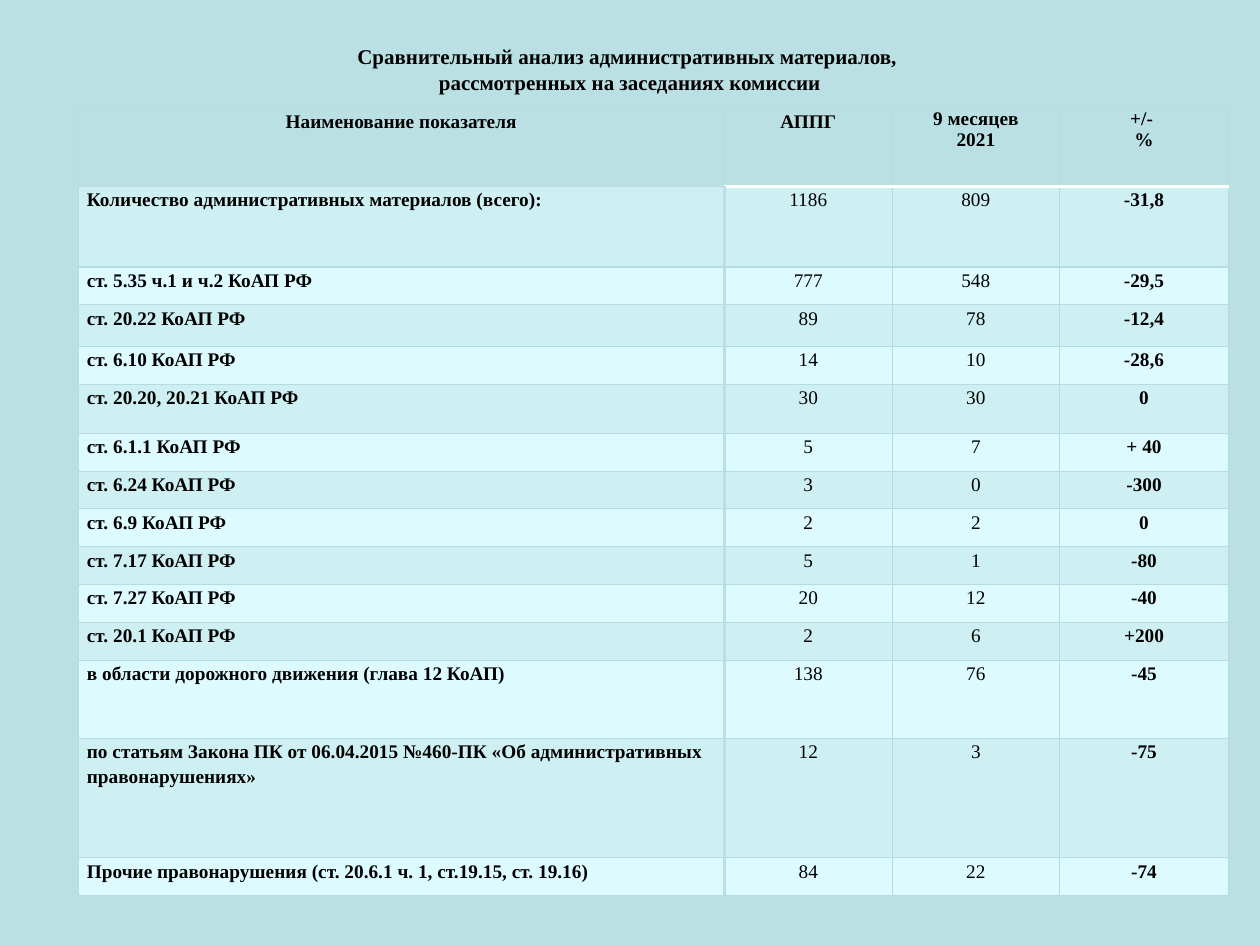
from lxml import etree
from pptx import Presentation
from pptx.dml.color import RGBColor
from pptx.enum.text import MSO_ANCHOR, PP_ALIGN
from pptx.oxml.ns import qn
from pptx.util import Inches, Pt

TOP = MSO_ANCHOR.TOP
LEFT, CENTER, JUSTIFY = PP_ALIGN.LEFT, PP_ALIGN.CENTER, PP_ALIGN.JUSTIFY

BACKGROUND = "BBE0E3"
BANDS = ("DDFBFF", "CFF0F2")
GRID = ("B6DCDF", 0.75)
COLUMN_RULE = (BACKGROUND, 2)
HEADER_RULE = ("FFFFFF", 2)

TITLE = "Сравнительный анализ административных материалов, \nрассмотренных на заседаниях комиссии"
HEADER = (
    ["Наименование показателя"],
    ["АППГ"],
    ["9 месяцев", "2021"],
    ["+/- ", "%"],
)
# Indicator, previous period, current period, change, row height
INDICATORS = (
    ("Количество административных материалов (всего):", "1186", "809", "-31,8", 0.64),
    ("ст. 5.35 ч.1 и ч.2 КоАП РФ", "777", "548", "-29,5", 0.3),
    ("ст. 20.22 КоАП РФ", "89", "78", "-12,4", 0.33),
    ("ст. 6.10 КоАП РФ", "14", "10", "-28,6", 0.3),
    ("ст. 20.20, 20.21 КоАП РФ", "30", "30", "0", 0.39),
    ("ст. 6.1.1 КоАП РФ", "5", "7", "+ 40", 0.3),
    ("ст. 6.24 КоАП РФ", "3", "0", "-300", 0.3),
    ("ст. 6.9 КоАП РФ", "2", "2", "0", 0.3),
    ("ст. 7.17 КоАП РФ", "5", "1", "-80", 0.3),
    ("ст. 7.27 КоАП РФ", "20", "12", "-40", 0.3),
    ("ст. 20.1 КоАП РФ", "2", "6", "+200", 0.3),
    ("в области дорожного движения (глава 12 КоАП)", "138", "76", "-45", 0.62),
    ("по статьям Закона ПК от 06.04.2015 №460-ПК «Об административных правонарушениях»",
     "12", "3", "-75", 0.95),
    ("Прочие правонарушения (ст. 20.6.1 ч. 1, ст.19.15, ст. 19.16)", "84", "22", "-74", 0.3),
)
LEFT_ALIGNED_ROWS = (2, 13)
HEADER_HEIGHT = 0.62
COLUMN_WIDTHS = (5.13, 1.33, 1.33, 1.34)


def color(value):
    return RGBColor.from_string(value)


def apply(target, values):
    for name, value in values.items():
        setattr(target, name, value)


class SlideBuilder:
    font = "Times New Roman"
    ink = "000000"
    cell_format = {"margin_left": Inches(0.07), "margin_right": Inches(0.07),
                   "margin_top": 0, "margin_bottom": 0, "vertical_anchor": TOP}
    spaced = {"line_spacing": 1.15, "space_after": Pt(10)}

    def __init__(self, slide):
        self.slide = slide

    def background(self, value):
        fill = self.slide.background.fill
        fill.solid()
        fill.fore_color.rgb = color(value)

    def add_lines(self, frame, lines, size, bold, paragraph_format):
        for index, line in enumerate(lines):
            paragraph = frame.paragraphs[0] if index == 0 else frame.add_paragraph()
            paragraph.text = line
            apply(paragraph, paragraph_format)
            for run in paragraph.runs:
                apply(run.font, {"name": self.font, "size": Pt(size), "bold": bold})
                run.font.color.rgb = color(self.ink)

    def title(self, text, box):
        frame = self.slide.shapes.add_textbox(*map(Inches, box)).text_frame
        apply(frame, {"word_wrap": True, "vertical_anchor": TOP})
        self.add_lines(frame, [text], 12, True, {"alignment": CENTER})

    def table(self, left, top, widths, heights):
        table = self.slide.shapes.add_table(
            len(heights), len(widths), Inches(left), Inches(top),
            Inches(sum(widths)), Inches(sum(heights))).table
        apply(table, {"first_row": False, "horz_banding": False})
        for column, width in zip(table.columns, widths):
            column.width = Inches(width)
        for row, height in zip(table.rows, heights):
            row.height = Inches(height)
        return table

    def cell(self, cell, lines, bold, align, fill, borders):
        apply(cell, self.cell_format)
        spacing = self.spaced if len(lines) == 1 else {}
        self.add_lines(cell.text_frame, lines, 11, bold, {"alignment": align, **spacing})
        self.borders(cell, borders)
        cell.fill.solid()
        cell.fill.fore_color.rgb = color(fill)

    def borders(self, cell, special):
        properties = cell._tc.get_or_add_tcPr()
        for side in "LRTB":
            value, width = special.get(side, GRID)
            line = etree.SubElement(properties, qn(f"a:ln{side}"), w=str(Pt(width)))
            solid = etree.SubElement(line, qn("a:solidFill"))
            etree.SubElement(solid, qn("a:srgbClr"), val=value)


def main():
    prs = Presentation()
    prs.slide_width, prs.slide_height = Inches(10), Inches(7.5)
    builder = SlideBuilder(prs.slides.add_slide(prs.slide_layouts[6]))
    builder.background(BACKGROUND)

    # Title
    builder.title(TITLE, (0.5, 0.3, 9, 1.25))

    # Table header
    heights = [HEADER_HEIGHT] + [indicator[-1] for indicator in INDICATORS]
    table = builder.table(0.62, 0.86, COLUMN_WIDTHS, heights)
    for column, lines in enumerate(HEADER):
        borders = {"B": HEADER_RULE} if column else {}
        builder.cell(table.cell(0, column), lines, True, CENTER, BACKGROUND, borders)

    # Indicator rows
    for row, (*texts, _) in enumerate(INDICATORS, start=1):
        name_align = LEFT if row in LEFT_ALIGNED_ROWS else JUSTIFY
        for column, text in enumerate(texts):
            borders = {}
            if column == 0:
                borders["R"] = COLUMN_RULE
            elif column == 1:
                borders["L"] = COLUMN_RULE
            if row == 1 and column:
                borders["T"] = HEADER_RULE
            builder.cell(table.cell(row, column), [text], column in (0, 3),
                         CENTER if column else name_align, BANDS[row % 2], borders)

    prs.save("out.pptx")


if __name__ == "__main__":
    main()
